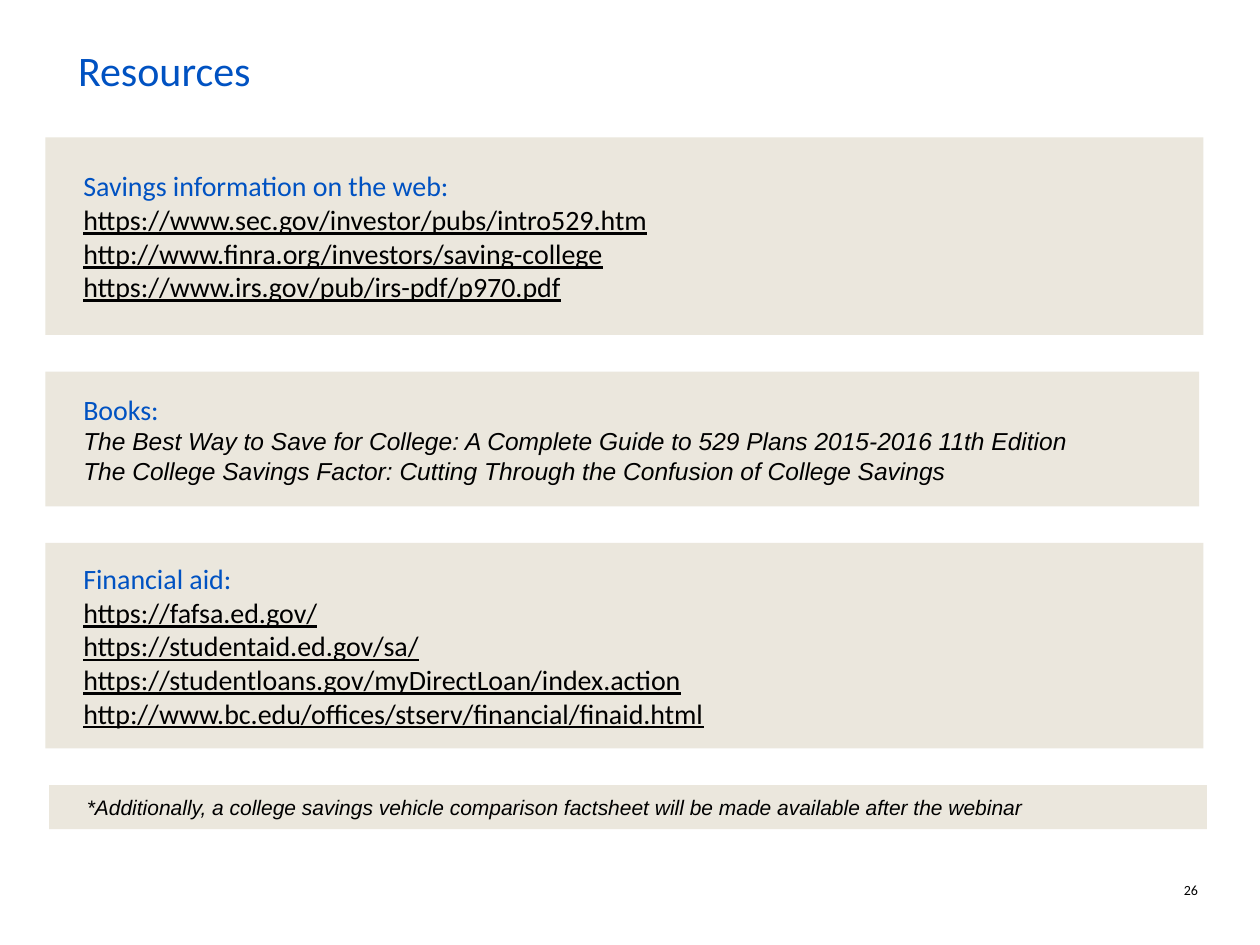
from pptx import Presentation
from pptx.dml.color import RGBColor
from pptx.enum.shapes import MSO_SHAPE as Shape
from pptx.enum.text import MSO_ANCHOR as Anchor, PP_ALIGN as Align
from pptx.util import Pt

BLUE = RGBColor(0x00, 0x52, 0xC2)
BLACK = RGBColor(0x00, 0x00, 0x00)
BEIGE = RGBColor(0xEB, 0xE7, 0xDD)

# Text styles: font name, size, colour, italic, underline
HEADING = ("Calibri", 16, BLUE, False, False)
LINK = ("Calibri", 16, BLACK, False, True)
BOOK = ("Arial", 14, BLACK, True, False)
NOTE = ("Arial", 12, BLACK, True, False)
TITLE = ("Calibri", 24, BLUE, False, False)
NUMBER = ("Calibri", 8, BLACK, False, False)

# Panels: left, top, width, height, lines of (text, style)
PANELS = [
    (26, 78.5, 661.7, 113, [
        ("Savings information on the web:", HEADING),
        ("https://www.sec.gov/investor/pubs/intro529.htm", LINK),
        ("http://www.finra.org/investors/saving-college", LINK),
        ("https://www.irs.gov/pub/irs-pdf/p970.pdf", LINK),
    ]),
    (26, 212.4, 659.3, 77, [
        ("Books:", HEADING),
        ("The Best Way to Save for College: A Complete Guide to 529 Plans "
         "2015-2016 11th Edition", BOOK),
        ("The College Savings Factor: Cutting Through the Confusion of "
         "College Savings", BOOK),
    ]),
    (26, 310.3, 661.7, 117.4, [
        ("Financial aid:", HEADING),
        ("https://fafsa.ed.gov/", LINK),
        ("https://studentaid.ed.gov/sa/", LINK),
        ("https://studentloans.gov/myDirectLoan/index.action", LINK),
        ("http://www.bc.edu/offices/stserv/financial/finaid.html", LINK),
    ]),
    (28, 448.6, 661.7, 25.2, [
        ("*Additionally, a college savings vehicle comparison factsheet "
         "will be made available after the webinar", NOTE),
    ]),
]


def write_lines(frame, lines, align=Align.LEFT):
    """Fill a text frame with one styled paragraph per line."""
    for index, (text, style) in enumerate(lines):
        para = frame.add_paragraph() if index else frame.paragraphs[0]
        para.text = text
        para.alignment = align
        font = para.font
        font.name, size, font.color.rgb, font.italic, font.underline = style
        font.size = Pt(size)


def set_margins(frame, side):
    frame.margin_left = frame.margin_right = Pt(side)
    frame.margin_top = frame.margin_bottom = 0


def add_title(page, text):
    title = page.shapes.title
    title.left, title.top, title.width, title.height = (
        Pt(37.4), Pt(21.6), Pt(336), Pt(36))
    title.text_frame.vertical_anchor = Anchor.MIDDLE
    write_lines(title.text_frame, [(text, TITLE)])


def add_panel(page, left, top, width, height, lines):
    panel = page.shapes.add_shape(
        Shape.RECTANGLE, Pt(left), Pt(top), Pt(width), Pt(height))
    panel.shadow.inherit = False
    panel.fill.solid()
    panel.fill.fore_color.rgb = BEIGE
    panel.line.fill.background()
    frame = panel.text_frame
    frame.word_wrap = True
    frame.vertical_anchor = Anchor.MIDDLE
    set_margins(frame, 21.6)
    write_lines(frame, lines)


def add_page_number(page, text):
    box = page.shapes.add_textbox(Pt(653), Pt(504), Pt(31.7), Pt(10))
    box.text_frame.word_wrap = True
    set_margins(box.text_frame, 0)
    write_lines(box.text_frame, [(text, NUMBER)], Align.RIGHT)


def main():
    deck = Presentation()
    deck.slide_width, deck.slide_height = Pt(720), Pt(540)
    page = deck.slides.add_slide(deck.slide_layouts.get_by_name("Title Only"))

    # Title, resource panels, page number
    add_title(page, "Resources")
    for panel in PANELS:
        add_panel(page, *panel)
    add_page_number(page, "26")

    deck.save("out.pptx")


if __name__ == "__main__":
    main()
